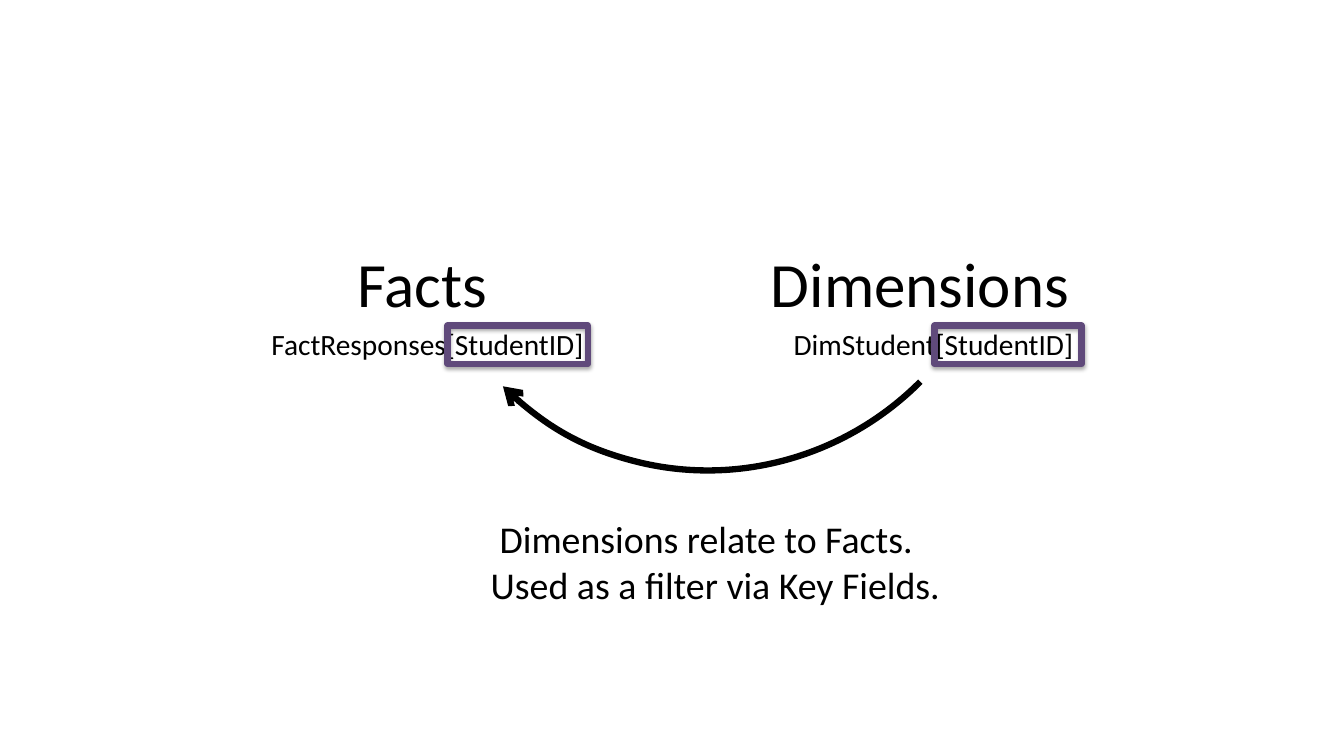
import pptx
import pptx.util
import pptx.dml.color
import pptx.enum.shapes
import pptx.enum.text
import pptx.oxml
import pptx.oxml.ns

# Content: each side has a heading, a field name and a frame round its key.
# Spans are (left, width) in columns, 100 columns across the slide.
SIDES = [
    {"head": ("Facts", 23.78, 15.23),
     "field": ("FactResponses[StudentID]", 17.18, 29.25),
     "key": (33.3, 10.43)},
    {"head": ("Dimensions", 55.13, 26.63),
     "field": ("DimStudent[StudentID]", 54.83, 29.25),
     "key": (69.53, 10.95)},
]
NOTE = ["Dimensions relate to Facts.", "Used as a filter via Key Fields."]
NOTE_SPAN = (21.68, 61.73)
ARC_SPAN = (30.9, 44.33)

# Bands are (top, height) in rows, 100 rows down the slide
BANDS = {"head": (29.2, 16.27), "field": (41, 8.93), "key": (43.07, 5.07),
         "note": (66.13, 16.27), "arc": (-15.47, 77.33)}
SIZES = {"head": 45, "field": 21, "note": 27}
COLORS = {"text": "000000", "frame": "604A7B", "arc": "000000"}
FONT = "Calibri"
STROKE = 4.5
SHIFT = 0.18  # inches, indent of the second note line

Pt, Inches = pptx.util.Pt, pptx.util.Inches
KIND = pptx.enum.shapes.MSO_SHAPE
NS = pptx.oxml.ns.nsdecls("a")

deck = pptx.Presentation()
deck.slide_width, deck.slide_height = Inches(13.33), Inches(7.5)
slide = deck.slides.add_slide(deck.slide_layouts[6])


def tint(name):
    return pptx.dml.color.RGBColor.from_string(COLORS[name])


def place(span, band):
    """Turn a column span and a named band into left, top, width, height."""
    (left, width), (top, height) = span, BANDS[band]
    col, row = deck.slide_width / 100, deck.slide_height / 100
    return [round(n) for n in (left * col, top * row, width * col, height * row)]


def add_text(lines, span, band):
    frame = slide.shapes.add_textbox(*place(span, band)).text_frame
    frame.word_wrap = True
    frame.vertical_anchor = pptx.enum.text.MSO_ANCHOR.MIDDLE
    frame.margin_left = frame.margin_right = Inches(0.07)
    frame.margin_top = frame.margin_bottom = Inches(0.04)
    for i, line in enumerate(lines):
        para = frame.paragraphs[0] if i == 0 else frame.add_paragraph()
        para.alignment = pptx.enum.text.PP_ALIGN.CENTER
        run = para.add_run()
        run.text = line
        run.font.name, run.font.size = FONT, Pt(SIZES[band])
        run.font.color.rgb = tint("text")
    return frame


def add_line(kind, span, band, color):
    """Add an unfilled shape with a thick outline and no shadow."""
    shape = slide.shapes.add_shape(kind, *place(span, band))
    shape.shadow.inherit = False
    shape.fill.background()
    shape.line.color.rgb = tint(color)
    shape.line.width = Pt(STROKE)
    return shape


# Headings and field names
for side in SIDES:
    for band in ("head", "field"):
        text, *span = side[band]
        add_text([text], span, band)

# Note below the arc
note = add_text(NOTE, NOTE_SPAN, "note")
props = note.paragraphs[1]._p.get_or_add_pPr()
props.set("marL", str(Inches(SHIFT)))
props.set("indent", "0")

# Frames round the key fields, with a soft shadow
for side in SIDES:
    box = add_line(KIND.RECTANGLE, side["key"], "key", "frame")
    box.line._get_or_add_ln().append(pptx.oxml.parse_xml(f"<a:round {NS}/>"))
    glow = box._element.spPr.find(pptx.oxml.ns.qn("a:effectLst"))
    glow.append(pptx.oxml.parse_xml(
        f'<a:outerShdw {NS} blurRad="{Pt(3.1)}" dist="{Pt(1.8)}" dir="5400000" '
        'rotWithShape="0"><a:srgbClr val="000000"><a:alpha val="35000"/>'
        '</a:srgbClr></a:outerShdw>'))

# Arc from the dimension key to the fact key
arc = add_line(KIND.ARC, ARC_SPAN, "arc", "arc")
arc.rotation = 134.9
arc.line._get_or_add_ln().append(
    pptx.oxml.parse_xml(f'<a:tailEnd {NS} type="arrow"/>'))

deck.save("out.pptx")
